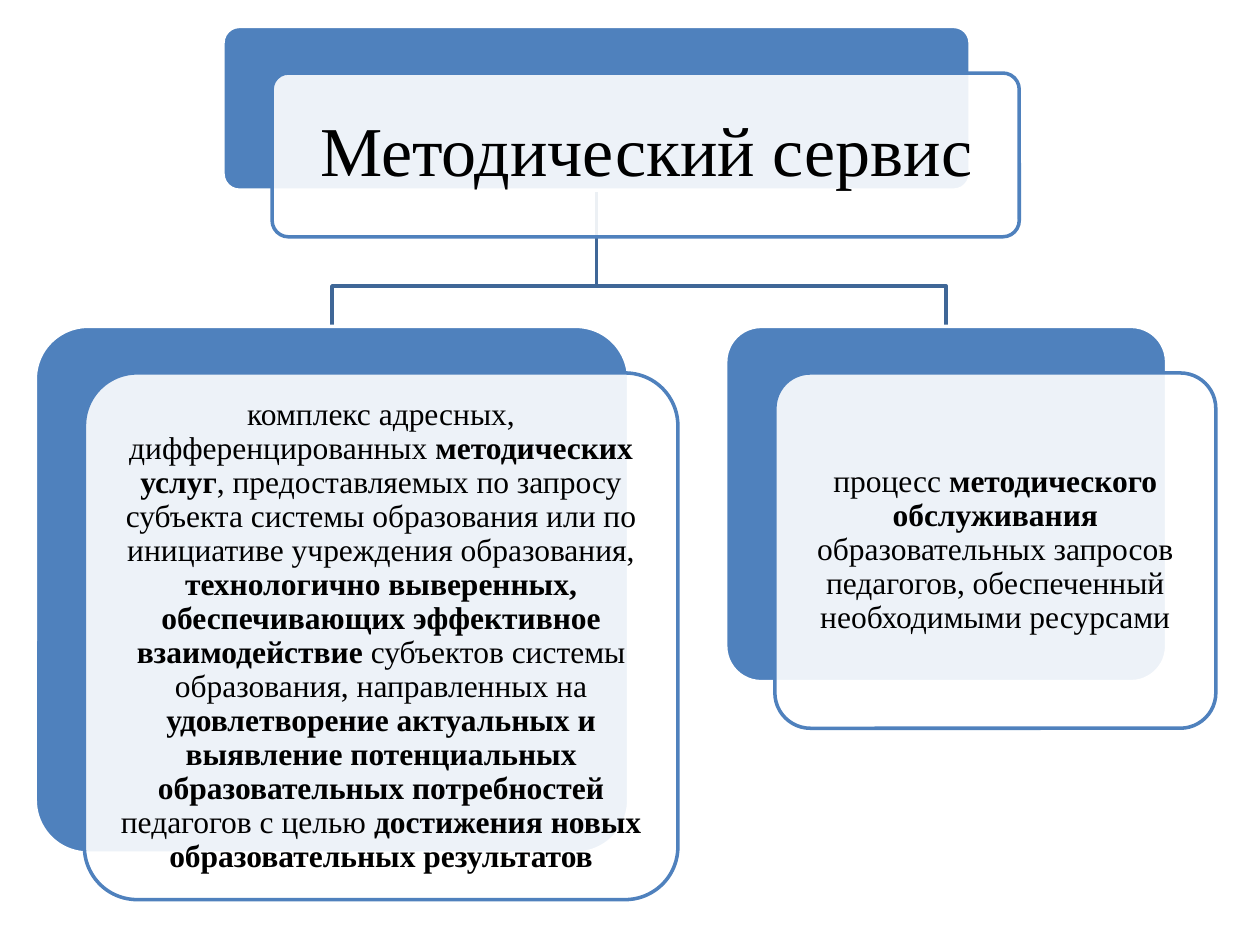
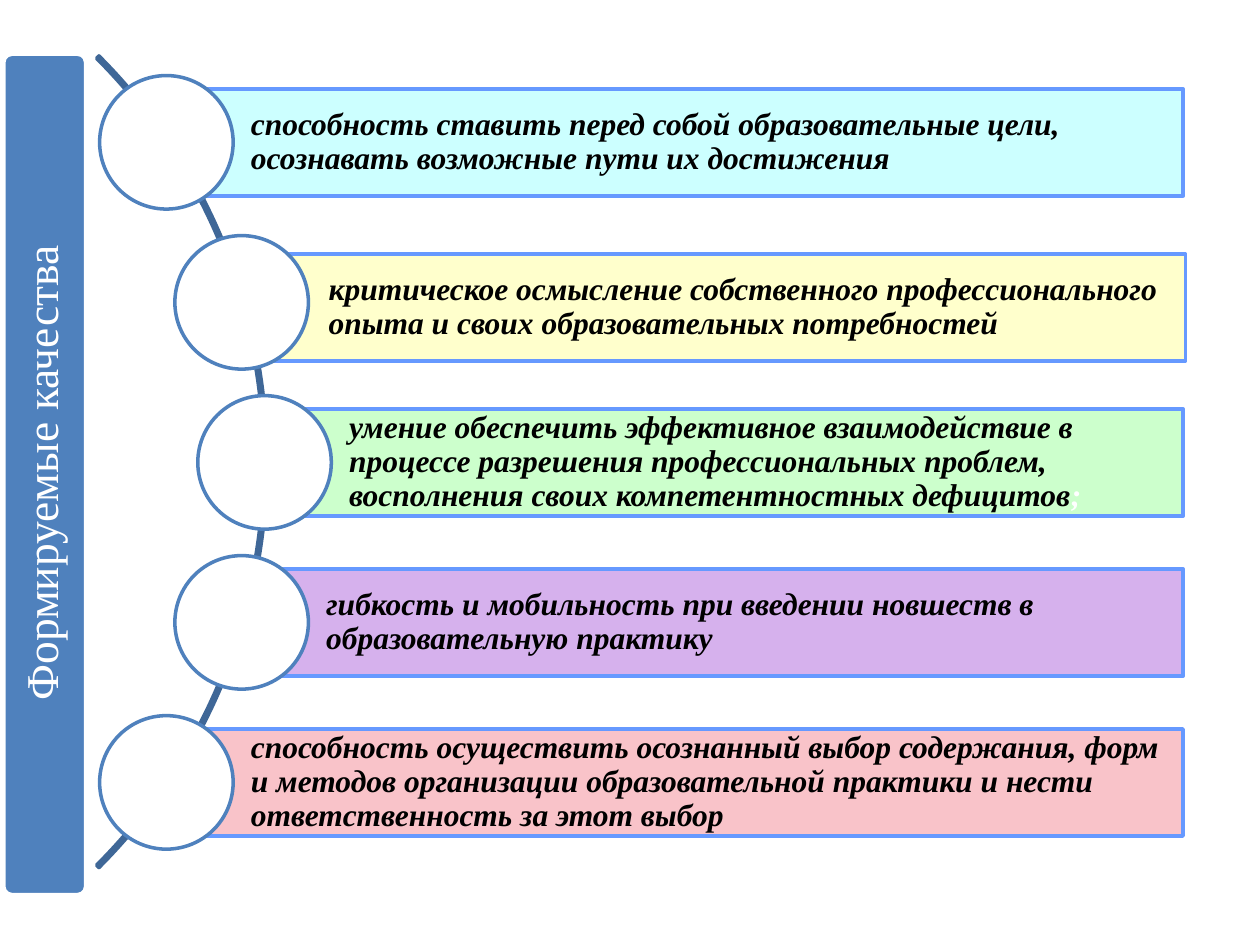
from math import sqrt

from lxml import etree
from pptx import Presentation
from pptx.dml.color import RGBColor
from pptx.enum.shapes import MSO_SHAPE
from pptx.enum.text import MSO_ANCHOR, MSO_AUTO_SIZE, PP_ALIGN
from pptx.oxml.ns import qn
from pptx.util import Inches, Pt

FONT = "Times New Roman"
LINE_WIDTH = Pt(2)
CORNER = 0.1
COLORS = {
    "white": "FFFFFF",
    "text": "000000",
    "accent": "4F81BD",
    "link": "3F6797",
    "band_line": "6699FF",
    "cyan": "CCFFFF",
    "yellow": "FFFFCC",
    "green": "CCFFCC",
    "violet": "D6B1ED",
    "pink": "F9C3C9",
}

SERVICE_TITLE = "Методический сервис"
# Each card box is left, top, width, height of its back panel
SERVICE_BOX = (1.77, 0.21, 5.93, 1.3)
CARD_OFFSET = (0.39, 0.37)
LINK_BEND = 2.27
DEFINITIONS = [
    {
        "box": (0.28, 2.59, 4.71, 4.18),
        "runs": [
            ("комплекс адресных, дифференцированных ", False),
            ("методических услуг", True),
            (", предоставляемых по запросу субъекта системы образования "
             "или по инициативе учреждения образования, ", False),
            ("технологично выверенных, обеспечивающих эффективное "
             "взаимодействие ", True),
            ("субъектов системы образования, направленных на ", False),
            ("удовлетворение актуальных и выявление потенциальных "
             "образовательных потребностей ", True),
            ("педагогов с целью ", False),
            ("достижения новых образовательных результатов", True),
        ],
    },
    {
        "box": (5.76, 2.59, 3.5, 2.82),
        "runs": [
            ("процесс ", False),
            ("методического обслуживания ", True),
            ("образовательных запросов педагогов, обеспеченный "
             "необходимыми ресурсами", False),
        ],
    },
]

QUALITIES_TITLE = "Формируемые качества"
# Fill, text, shift of the band from its regular place
QUALITIES = [
    ("cyan", "способность ставить перед собой образовательные цели, "
     "осознавать возможные пути их достижения", (0, 0)),
    ("yellow", "критическое осмысление собственного профессионального опыта "
     "и своих образовательных потребностей", (0.02, 0.04)),
    ("green", "умение обеспечить эффективное взаимодействие в процессе "
     "разрешения профессиональных проблем, восполнения своих "
     "компетентностных дефицитов;", (0, 0)),
    ("violet", "гибкость и мобильность при введении новшеств в "
     "образовательную практику", (0, 0)),
    ("pink", "способность осуществить осознанный выбор содержания, форм и "
     "методов организации образовательной практики и нести ответственность "
     "за этот выбор", (0, 0)),
]
ARC_BOX = (-6.99, -0.89, 9.11, 9.11)
ARC_CENTER = (-2.43, 3.67)
CIRCLE_TRACK_RADIUS = 4.53
CIRCLE_SIZE = 1.06
ROW_STEP = 1.27
BAND_RIGHT = 9.39
BAND_HEIGHT = 0.85


def color(name):
    return RGBColor.from_string(COLORS[name])


def style_line(shape, line):
    shape.shadow.inherit = False
    shape.line.color.rgb = color(line)
    shape.line.width = LINE_WIDTH


def add_panel(slide, kind, box, fill, line):
    shape = slide.shapes.add_shape(kind, *map(Inches, box))
    if fill:
        shape.fill.solid()
        shape.fill.fore_color.rgb = color(fill)
    else:
        shape.fill.background()
    style_line(shape, line)
    return shape


def add_round_panel(slide, box, fill, line):
    shape = add_panel(slide, MSO_SHAPE.ROUNDED_RECTANGLE, box, fill, line)
    shape.adjustments[0] = CORNER
    return shape


def format_text(shape, size, font_color, align, margins):
    """Format all text of the shape; margins are left, top, right, bottom."""
    frame = shape.text_frame
    frame.word_wrap = True
    frame.auto_size = MSO_AUTO_SIZE.NONE
    frame.vertical_anchor = MSO_ANCHOR.MIDDLE
    (frame.margin_left, frame.margin_top,
     frame.margin_right, frame.margin_bottom) = map(Inches, margins)
    paragraph = frame.paragraphs[0]
    paragraph.alignment = align
    paragraph.line_spacing = 0.9
    for run in paragraph.runs:
        run.font.name = FONT
        run.font.size = Pt(size)
        run.font.color.rgb = color(font_color)


def place_title(slide, text, box, size, font_color, margin, rotation=0):
    """Fill the title placeholder and bring it in front of its panel."""
    title = slide.shapes.title
    title.left, title.top, title.width, title.height = map(Inches, box)
    title.rotation = rotation
    title.text_frame.text = text
    format_text(title, size, font_color, PP_ALIGN.CENTER, [margin] * 4)
    title.element.getparent().append(title.element)


def add_card(slide, box):
    """Draw a back panel with a translucent front panel, returned for text."""
    add_round_panel(slide, box, "accent", "white")
    left, top, width, height = box
    front_box = (left + CARD_OFFSET[0], top + CARD_OFFSET[1], width, height)
    front = add_round_panel(slide, front_box, "white", "accent")
    fill_color = front.element.find(".//" + qn("a:srgbClr"))
    etree.SubElement(fill_color, qn("a:alpha")).set("val", "90000")
    return front


def add_link(slide, parent_box, child_box):
    """Draw a bent line from the parent's bottom middle to the child's top."""
    start_x = parent_box[0] + parent_box[2] / 2
    end_x = child_box[0] + child_box[2] / 2
    points = [
        (start_x, parent_box[1] + parent_box[3]),
        (start_x, LINK_BEND),
        (end_x, LINK_BEND),
        (end_x, child_box[1]),
    ]
    start, *rest = [(Inches(x), Inches(y)) for x, y in points]
    builder = slide.shapes.build_freeform(*start)
    builder.add_line_segments(rest, close=False)
    link = builder.convert_to_shape()
    link.fill.background()
    style_line(link, "link")


def build_service_slide(slide):
    for definition in reversed(DEFINITIONS):
        add_link(slide, SERVICE_BOX, definition["box"])
    add_card(slide, SERVICE_BOX)
    place_title(slide, SERVICE_TITLE, (2.2, 0.61, 5.86, 1.23), 40, "text", 0.17)
    for definition in DEFINITIONS:
        card = add_card(slide, definition["box"])
        paragraph = card.text_frame.paragraphs[0]
        for text, bold in definition["runs"]:
            run = paragraph.add_run()
            run.text = text
            run.font.bold = bold
        format_text(card, 18, "text", PP_ALIGN.CENTER, [0.07] * 4)


def add_quality(slide, index, fill, text, shift):
    center_y = ARC_CENTER[1] + (index - (len(QUALITIES) - 1) / 2) * ROW_STEP
    rise = center_y - ARC_CENTER[1]
    center_x = ARC_CENTER[0] + sqrt(CIRCLE_TRACK_RADIUS ** 2 - rise ** 2)

    band_box = (center_x + shift[0], center_y - BAND_HEIGHT / 2 + shift[1],
                BAND_RIGHT - center_x, BAND_HEIGHT)
    band = add_panel(slide, MSO_SHAPE.RECTANGLE, band_box, fill, "band_line")
    paragraph = band.text_frame.paragraphs[0]
    paragraph.text = text.rstrip(";")
    if text.endswith(";"):
        paragraph.add_run().text = ";"
    format_text(band, 18, "text", PP_ALIGN.LEFT, (0.67, 0.05, 0.05, 0.05))
    for run in paragraph.runs:
        run.font.bold = run.font.italic = True
        if run.text == ";":
            run.font.color.rgb = color("white")

    circle_box = (center_x - CIRCLE_SIZE / 2, center_y - CIRCLE_SIZE / 2,
                  CIRCLE_SIZE, CIRCLE_SIZE)
    add_panel(slide, MSO_SHAPE.OVAL, circle_box, "white", "accent")


def build_qualities_slide(slide):
    bar = add_round_panel(slide, (-2.98, 3.44, 6.67, 0.65), "accent", "white")
    bar.rotation = 270
    place_title(slide, QUALITIES_TITLE, (-2.97, 3.45, 6.63, 0.61), 26,
                "white", 0.11, rotation=270)
    arc = add_panel(slide, MSO_SHAPE.BLOCK_ARC, ARC_BOX, None, "link")
    for position, value in enumerate((189, 27, 0.003)):
        arc.adjustments[position] = value
    for index, quality in enumerate(QUALITIES):
        add_quality(slide, index, *quality)


def main():
    presentation = Presentation()
    presentation.slide_width = Inches(10)
    presentation.slide_height = Inches(7.5)
    title_only = presentation.slide_layouts[5]
    for build in (build_service_slide, build_qualities_slide):
        build(presentation.slides.add_slide(title_only))
    presentation.save("out.pptx")


if __name__ == "__main__":
    main()
